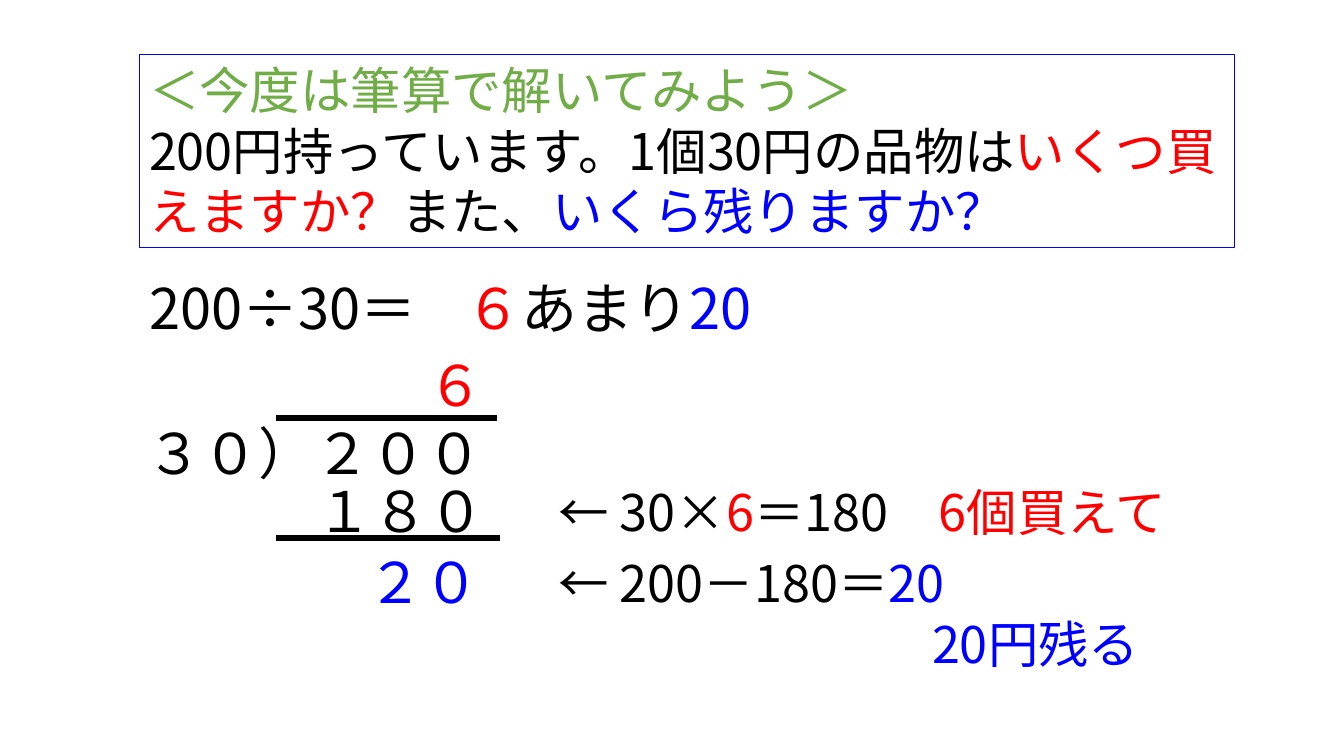
from dataclasses import dataclass

from lxml.etree import SubElement
from pptx import Presentation
from pptx.dml.color import RGBColor
from pptx.enum.shapes import MSO_CONNECTOR, MSO_SHAPE
from pptx.enum.text import MSO_ANCHOR, MSO_AUTO_SIZE, PP_ALIGN
from pptx.oxml.ns import qn
from pptx.slide import Slide
from pptx.text.text import TextFrame
from pptx.util import Pt

BLACK = RGBColor(0x00, 0x00, 0x00)
RED = RGBColor(0xFF, 0x00, 0x00)
BLUE = RGBColor(0x00, 0x00, 0xFF)
GREEN = RGBColor(0x70, 0xAD, 0x47)
FONT = "Noto Sans CJK JP"
PROSE_SIZE = 36
SUM_SIZE = 40


@dataclass
class Span:
    text: str
    color: RGBColor = BLACK


@dataclass
class Line:
    spans: list[Span]
    indent: float = 0


@dataclass
class Block:
    left: float
    top: float
    width: float
    height: float
    lines: list[Line]
    size: int = SUM_SIZE
    wrap: bool = True


@dataclass
class Rule:
    left: float
    right: float
    y: float


# Word problem in the frame
QUESTION = Block(99.4, 38.9, 782.6, 138.2, [
    Line([Span("＜今度は筆算で解いてみよう＞", GREEN)]),
    Line([Span("200円持っています。1個30円の品物は"), Span("いくつ買えますか？", RED),
          Span("また、"), Span("いくら残りますか？", BLUE)]),
], PROSE_SIZE)

# Explanations beside the written division
EXPLANATIONS = [
    Block(391.7, 339.8, 504, 51.1, [
        Line([Span("← 30×"), Span("6", RED), Span("＝180　"), Span("6個買えて", RED)]),
    ], PROSE_SIZE),
    Block(391.7, 391, 439.9, 94.3, [
        Line([Span("← 200－180＝"), Span("20", BLUE)]),
        Line([Span("20円残る", BLUE)], indent=267),
    ], PROSE_SIZE),
]

# Written division, row by row
DIVISION = [
    Block(298.1, 247, 47.5, 55.4, [Line([Span("６", RED)])]),
    Block(97.9, 295.2, 258.5, 55.4, [Line([Span("３０）２００")])]),
    Block(218.9, 337, 136.1, 55.4, [Line([Span("１８０")])]),
    Block(255.6, 387.4, 113, 55.4, [Line([Span("２０", BLUE)])]),
]
RULES = [Rule(197.3, 355, 298.8), Rule(197.3, 357.1, 384.5)]

# Equation and its answer
EQUATION = [
    Block(99.4, 192.2, 238.3, 55.4, [Line([Span("200÷30＝")])], wrap=False),
    Block(325.4, 191.5, 233.3, 55.4,
          [Line([Span("６", RED), Span("あまり"), Span("20", BLUE)])], wrap=False),
]


def write_text(frame: TextFrame, block: Block) -> None:
    frame.word_wrap = block.wrap
    frame.auto_size = MSO_AUTO_SIZE.SHAPE_TO_FIT_TEXT
    for index, line in enumerate(block.lines):
        paragraph = frame.add_paragraph() if index else frame.paragraphs[0]
        paragraph.alignment = PP_ALIGN.LEFT
        if line.indent:
            paragraph._p.get_or_add_pPr().set("marL", str(Pt(line.indent)))
        for span in line.spans:
            run = paragraph.add_run()
            run.text = span.text
            run.font.size = Pt(block.size)
            run.font.name = FONT
            run.font.color.rgb = span.color
            SubElement(run.font._element, qn("a:ea")).set("typeface", FONT)


def add_text(slide: Slide, block: Block) -> None:
    shape = slide.shapes.add_textbox(
        Pt(block.left), Pt(block.top), Pt(block.width), Pt(block.height))
    write_text(shape.text_frame, block)


def add_framed_text(slide: Slide, block: Block) -> None:
    shape = slide.shapes.add_shape(
        MSO_SHAPE.RECTANGLE,
        Pt(block.left), Pt(block.top), Pt(block.width), Pt(block.height))
    shape.shadow.inherit = False
    shape.fill.background()
    shape.line.color.rgb = BLUE
    shape.line.width = Pt(0.75)
    shape.text_frame.vertical_anchor = MSO_ANCHOR.TOP
    write_text(shape.text_frame, block)


def add_rule(slide: Slide, rule: Rule) -> None:
    connector = slide.shapes.add_connector(
        MSO_CONNECTOR.STRAIGHT,
        Pt(rule.left), Pt(rule.y), Pt(rule.right), Pt(rule.y))
    connector.line.color.rgb = BLACK
    connector.line.width = Pt(4.5)
    SubElement(connector._element.spPr, qn("a:effectLst"))


def main() -> None:
    presentation = Presentation()
    presentation.slide_width = Pt(960)
    presentation.slide_height = Pt(540)
    slide = presentation.slides.add_slide(presentation.slide_layouts[6])

    add_framed_text(slide, QUESTION)
    for block in EXPLANATIONS + DIVISION + EQUATION:
        add_text(slide, block)
    for rule in RULES:
        add_rule(slide, rule)

    presentation.save("out.pptx")


if __name__ == "__main__":
    main()
